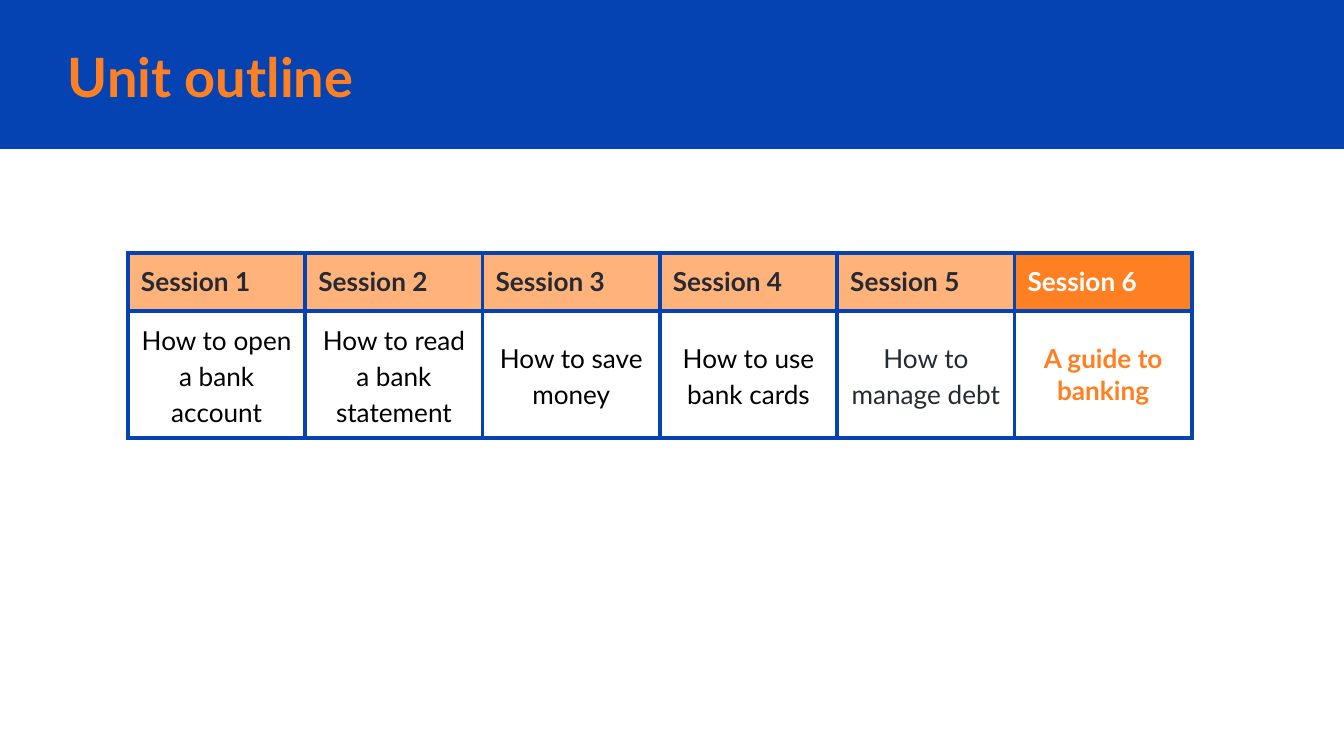
"""Build the unit outline slide with its table of sessions."""
from lxml.etree import SubElement
from pptx import Presentation
from pptx.dml.color import RGBColor
from pptx.enum.shapes import MSO_SHAPE
from pptx.enum.text import MSO_ANCHOR, PP_ALIGN
from pptx.oxml.ns import qn
from pptx.util import Pt

BLUE, ORANGE, PEACH = "0543B3", "FF8022", "FFB27A"
DARK, BLACK, WHITE = "262A33", "000000", "FFFFFF"

TITLE = "Unit outline"
HEAD = dict(color=DARK, bold=True)
BODY = dict(color=BLACK, align=PP_ALIGN.CENTER, space=1.15)
LAST = dict(color=ORANGE, align=PP_ALIGN.CENTER, bold=True)
ROWS = [
    [(f"Session {n}", PEACH, 13, HEAD) for n in range(1, 6)]
    + [("Session 6", ORANGE, 13, HEAD | dict(color=WHITE))],
    [
        ("How to open a bank account", None, 9, BODY),
        ("How to read a bank statement", None, 9, BODY),
        ("How to save money", None, 9, BODY),
        ("How to use bank cards", None, 9, BODY),
        ("How to manage debt", None, 9, BODY | dict(color=DARK)),
        ("A guide to banking", None, 13, LAST),
    ],
]
HEIGHTS = [58, 127]
ANCHORS = [MSO_ANCHOR.TOP, MSO_ANCHOR.MIDDLE]
LEFT, TOP, WIDTH = 128, 253, 1064


def px(n):
    return round(n * 914400 / 134.4)


def rgb(code):
    return RGBColor.from_string(code)


def write(frame, text, color, size=14, bold=False, align=PP_ALIGN.LEFT, space=None):
    para = frame.paragraphs[0]
    para.alignment = align
    para.line_spacing = space
    run = para.add_run()
    run.text = text
    font = run.font
    font.name, font.size, font.bold = "Lato", Pt(size), bold
    font.color.rgb = rgb(color)


def pad(box, gap):
    box.margin_left = box.margin_right = px(gap)
    box.margin_top = box.margin_bottom = px(gap)


def edge(cell):
    props = cell._tc.get_or_add_tcPr()
    for side in ("lnL", "lnR", "lnT", "lnB"):
        line = SubElement(props, qn(f"a:{side}"), w=str(Pt(2.25)))
        fill = SubElement(line, qn("a:solidFill"))
        SubElement(fill, qn("a:srgbClr"), val=BLUE)


def paint(cell, fill):
    if fill:
        cell.fill.solid()
        cell.fill.fore_color.rgb = rgb(fill)
    else:
        cell.fill.background()


def add_title(slide):
    band = slide.shapes.add_shape(MSO_SHAPE.RECTANGLE, 0, 0, px(1344), px(149))
    band.shadow.inherit = False
    band.fill.solid()
    band.fill.fore_color.rgb = rgb(BLUE)
    band.line.fill.background()
    box = slide.shapes.add_textbox(px(55), px(38), px(1137), px(75))
    frame = box.text_frame
    frame.word_wrap = True
    frame.vertical_anchor = MSO_ANCHOR.MIDDLE
    pad(frame, 13)
    write(frame, TITLE, ORANGE, size=29, bold=True)


def add_grid(slide):
    count = len(ROWS[0])
    table = slide.shapes.add_table(
        len(ROWS), count, px(LEFT), px(TOP), px(WIDTH), px(sum(HEIGHTS))
    ).table
    table.first_row = table.horz_banding = False
    for col in table.columns:
        col.width = px(WIDTH) // count
    for r, row in enumerate(ROWS):
        table.rows[r].height = px(HEIGHTS[r])
        for c, (text, fill, gap, style) in enumerate(row):
            cell = table.cell(r, c)
            edge(cell)
            paint(cell, fill)
            pad(cell, gap)
            cell.vertical_anchor = ANCHORS[r]
            write(cell.text_frame, text, **style)


def main():
    deck = Presentation()
    deck.slide_width, deck.slide_height = px(1344), px(756)
    slide = deck.slides.add_slide(deck.slide_layouts[6])
    add_title(slide)
    add_grid(slide)
    deck.save("out.pptx")


if __name__ == "__main__":
    main()
